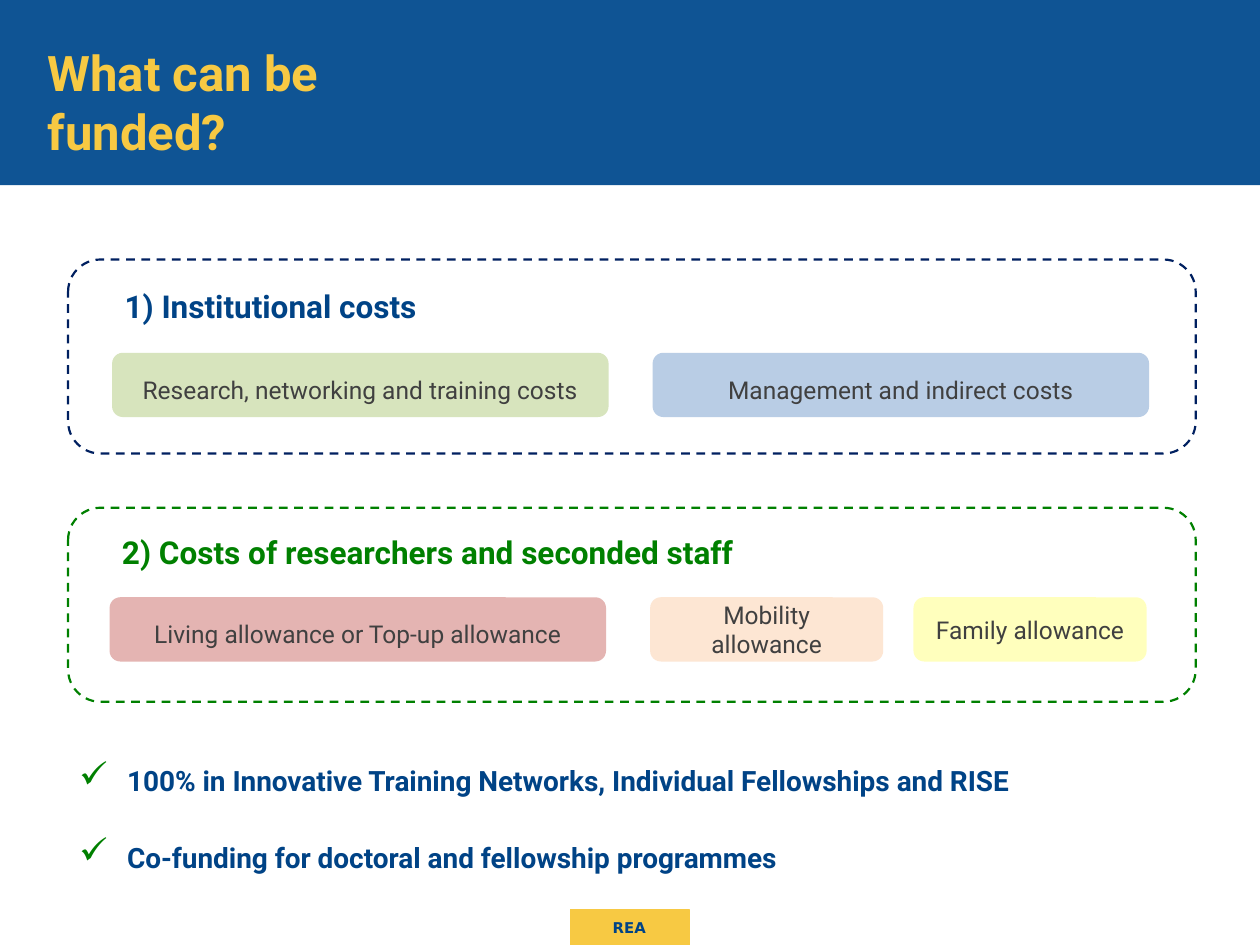
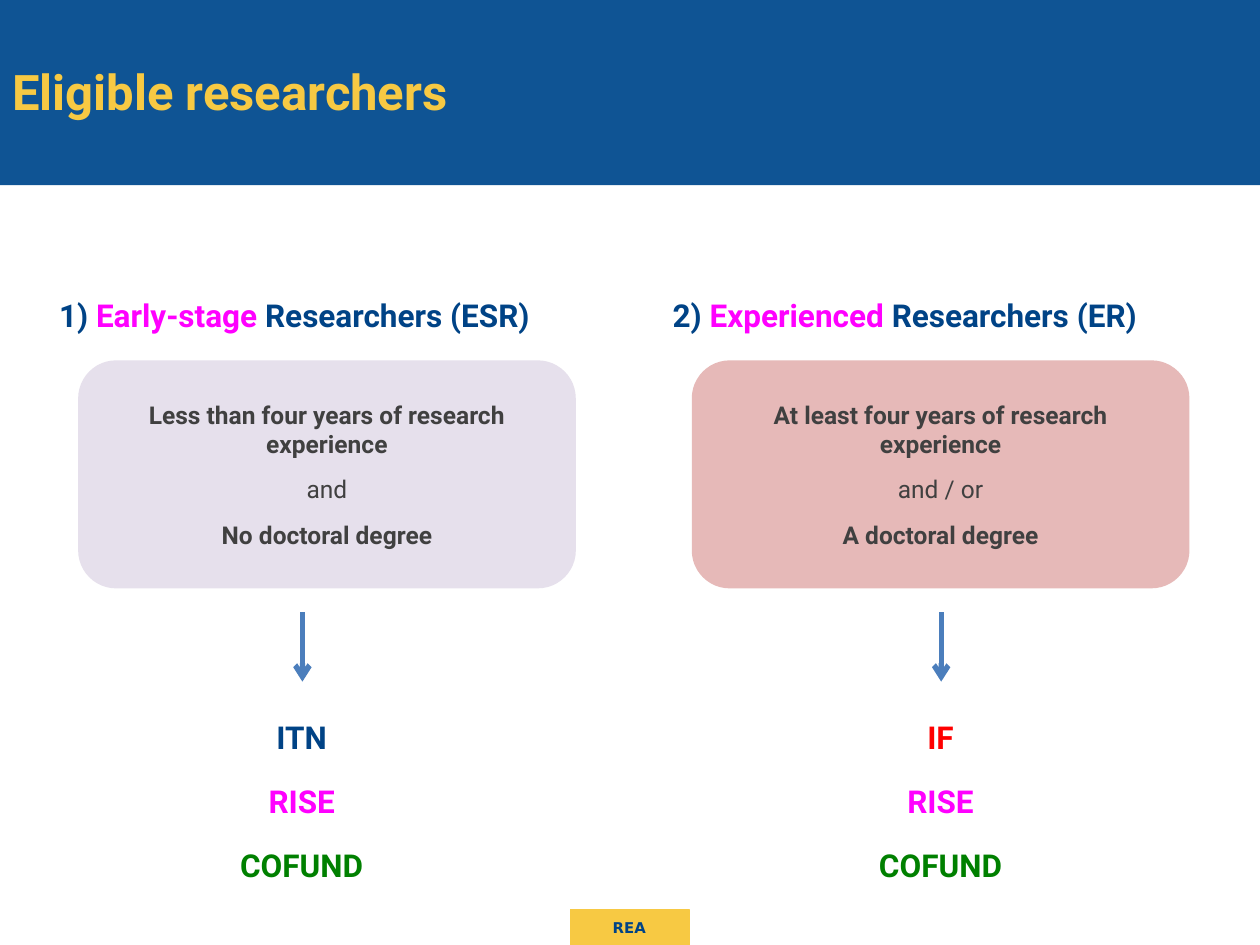
from lxml import etree
from pptx import Presentation
from pptx.dml.color import RGBColor
from pptx.enum.dml import MSO_LINE
from pptx.enum.shapes import MSO_CONNECTOR, MSO_SHAPE
from pptx.enum.text import MSO_ANCHOR, PP_ALIGN
from pptx.oxml.ns import qn
from pptx.util import Inches, Pt

RECT, ROUNDED = MSO_SHAPE.RECTANGLE, MSO_SHAPE.ROUNDED_RECTANGLE
STRAIGHT, DASH = MSO_CONNECTOR.STRAIGHT, MSO_LINE.DASH
LEFT, CENTER = PP_ALIGN.LEFT, PP_ALIGN.CENTER
TOP, MIDDLE = MSO_ANCHOR.TOP, MSO_ANCHOR.MIDDLE

WHITE = RGBColor(0xFF, 0xFF, 0xFF)
BAND_BLUE = RGBColor(0x0F, 0x54, 0x94)
GOLD = RGBColor(0xF7, 0xC9, 0x43)
BLUE = RGBColor(0x00, 0x43, 0x86)
NAVY = RGBColor(0x00, 0x20, 0x60)
GREEN = RGBColor(0x00, 0x80, 0x00)
MAGENTA = RGBColor(0xFF, 0x00, 0xFF)
RED = RGBColor(0xFF, 0x00, 0x00)
GREY = RGBColor(0x40, 0x40, 0x40)
ARROW_BLUE = RGBColor(0x4B, 0x7E, 0xBC)
PALE_GREEN = RGBColor(0xD7, 0xE4, 0xBD)
PALE_BLUE = RGBColor(0xB9, 0xCD, 0xE5)
ROSE = RGBColor(0xE4, 0xB4, 0xB2)
PEACH = RGBColor(0xFD, 0xE6, 0xD3)
PALE_YELLOW = RGBColor(0xFF, 0xFF, 0xBD)
LILAC = RGBColor(0xE6, 0xE0, 0xEC)
PINK = RGBColor(0xE6, 0xB9, 0xB8)


class Deck:
    """Holds the presentation, its style and the current slide."""

    font = "Roboto"

    def __init__(self):
        self.prs = Presentation()
        self.prs.slide_width, self.prs.slide_height = Inches(10), Inches(7.5)
        self.s = None

    def slide(self, title, x, y, w, h):
        self.s = self.prs.slides.add_slide(self.prs.slide_layouts[6])
        self.s.background.fill.solid()
        self.s.background.fill.fore_color.rgb = WHITE
        self.shape(RECT, 4.53, 7.22, 0.94, 0.28, fill=GOLD, line=GOLD, width=0.75)
        self.shape(RECT, 0, 0, 10, 1.47, fill=BAND_BLUE)
        self.text(4.51, 7.2, 0.97, 0.32, ["REA"], 8.5, BLUE, align=CENTER,
                  anchor=MIDDLE, font="DejaVu Sans")
        self.text(x, y, w, h, [title], 28, GOLD)

    def shape(self, kind, x, y, w, h, fill=None, line=None, width=1.25, dash=None):
        sp = self.s.shapes.add_shape(kind, Inches(x), Inches(y), Inches(w), Inches(h))
        sp.shadow.inherit = False
        if fill is None:
            sp.fill.background()
        else:
            sp.fill.solid()
            sp.fill.fore_color.rgb = fill
        if line is None:
            sp.line.fill.background()
        else:
            sp.line.color.rgb = line
            sp.line.width = Pt(width)
            sp.line.dash_style = dash
        return sp

    def text(self, x, y, w, h, paragraphs, size, color, anchor=TOP, **style):
        sp = self.s.shapes.add_textbox(Inches(x), Inches(y), Inches(w), Inches(h))
        return self.put_text(sp, paragraphs, size, color, anchor, **style)

    def put_text(self, sp, paragraphs, size, color, anchor=MIDDLE, align=LEFT, bold=True,
                 spacing=None, before=0, after=0, font=None):
        """Fills a shape; a paragraph is a string or a list of (text, colour)."""
        tf = sp.text_frame
        tf.word_wrap = True
        tf.vertical_anchor = anchor
        for i, parts in enumerate(paragraphs):
            p = tf.add_paragraph() if i else tf.paragraphs[0]
            p.alignment = align
            p.line_spacing = spacing
            p.space_before = Pt(before if i else 0)
            p.space_after = Pt(after)
            for part, tint in [(parts, color)] if isinstance(parts, str) else parts:
                r = p.add_run()
                r.text = part
                r.font.name = font or self.font
                r.font.size = Pt(size)
                r.font.bold = bold
                r.font.color.rgb = tint
        return tf

    def heading(self, x, y, w, h, parts, color=BLUE):
        self.text(x, y, w, h, [parts], 18, color, spacing=1.5, after=15)

    def card(self, x, y, w, h, fill, paragraphs, **style):
        sp = self.shape(ROUNDED, x, y, w, h, fill=fill)
        return self.put_text(sp, paragraphs, 14, GREY, align=CENTER, **style)

    def checklist(self, x, y, w, h, items):
        tf = self.text(x, y, w, h, items, 16, BLUE, spacing=1.5, after=15)
        for p in tf.paragraphs:
            pPr = p._p.get_or_add_pPr()
            pPr.set("marL", str(Inches(0.38)))
            pPr.set("indent", str(-Inches(0.38)))
            color = etree.SubElement(pPr, qn("a:buClr"))
            etree.SubElement(color, qn("a:srgbClr"), val=str(GREEN))
            etree.SubElement(pPr, qn("a:buSzPct"), val="130000")
            etree.SubElement(pPr, qn("a:buChar"), char="✓")

    def down_arrow(self, x, top, bottom):
        c = self.s.shapes.add_connector(STRAIGHT, Inches(x), Inches(top),
                                        Inches(x), Inches(bottom))
        c.line.color.rgb = ARROW_BLUE
        c.line.width = Pt(3)
        etree.SubElement(c.line._get_or_add_ln(), qn("a:tailEnd"), type="arrow")
        etree.SubElement(c._element.spPr, qn("a:effectLst"))


def funding_slide(deck):
    deck.slide("What can be funded?", 0.28, 0.29, 3.62, 1.04)
    for y, color in ((2.06, NAVY), (4.03, GREEN)):
        deck.shape(ROUNDED, 0.54, y, 8.95, 1.54, line=color, dash=DASH)
    deck.heading(0.89, 2.08, 4.31, 0.49, "1) Institutional costs")
    deck.heading(0.87, 4.03, 7.03, 0.56, "2) Costs of researchers and seconded staff", GREEN)
    wide, narrow = 3.94, 1.85
    costs = (
        (0.89, 2.8, wide, PALE_GREEN, "Research, networking and training costs"),
        (5.18, 2.8, wide, PALE_BLUE, "Management and indirect costs"),
        (0.87, 4.74, wide, ROSE, "Living allowance or Top-up allowance"),
        (5.16, 4.74, narrow, PEACH, "Mobility allowance"),
        (7.25, 4.74, narrow, PALE_YELLOW, "Family allowance"),
    )
    for x, y, w, fill, label in costs:
        deck.card(x, y, w, 0.51, fill, [label], bold=False,
                  spacing=Pt(22) if w == wide else None)
    deck.checklist(0.53, 5.88, 9.45, 1.11, [
        "100% in Innovative Training Networks, Individual Fellowships and RISE",
        "Co-funding for doctoral and fellowship programmes",
    ])


def researchers_slide(deck):
    deck.slide("Eligible researchers", 0, 0.44, 4.13, 0.57)
    groups = (
        (0.37, 2.4, "1) ", "Early-stage", " Researchers (ESR)", LILAC,
         ["Less than four years of research experience", "and", "No doctoral degree"],
         ("ITN", BLUE)),
        (5.24, 7.47, "2) ", "Experienced", " Researchers (ER)", PINK,
         ["At least four years of research experience", "and / or", "A doctoral degree"],
         ("IF", RED)),
    )
    for x, axis, number, stage, rest, fill, criteria, scheme in groups:
        deck.heading(x, 2.15, 4.61, 0.56, [(number, BLUE), (stage, MAGENTA), (rest, BLUE)])
        tf = deck.card(x + 0.25, 2.86, 3.95, 1.81, fill, criteria, before=9)
        tf.paragraphs[1].runs[0].font.bold = False
        deck.down_arrow(axis, 4.86, 5.41)
        schemes = [[scheme], [("RISE", MAGENTA)], [("COFUND", GREEN)]]
        deck.text(axis - 0.69, 5.65, 1.37, 1.43, schemes, 18, BLUE, align=CENTER, after=15)


def main():
    deck = Deck()
    funding_slide(deck)
    researchers_slide(deck)
    deck.prs.save("out.pptx")


if __name__ == "__main__":
    main()
